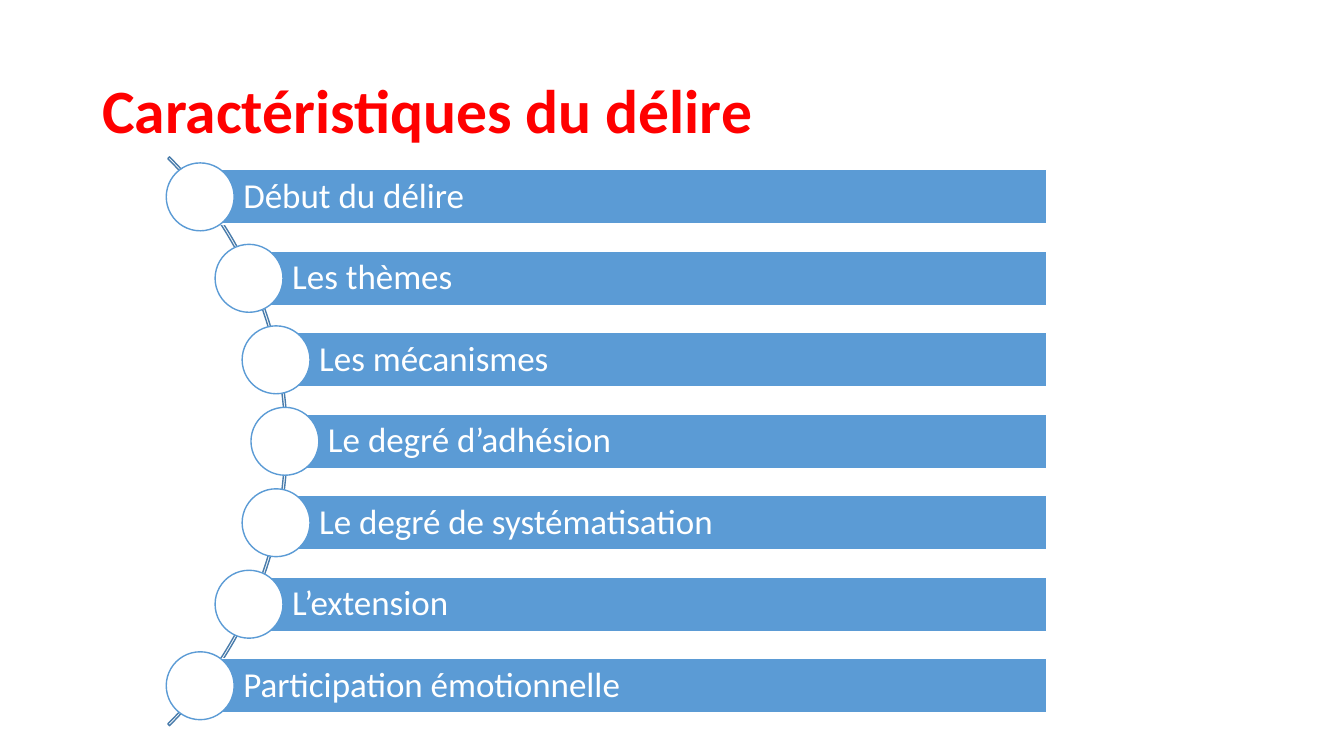
import pptx
import pptx.util
import pptx.dml.color
import pptx.enum.shapes
import pptx.enum.text

Pt = pptx.util.Pt
RGB = pptx.dml.color.RGBColor
KIND = pptx.enum.shapes.MSO_SHAPE
MIDDLE = pptx.enum.text.MSO_ANCHOR.MIDDLE
LEFT = pptx.enum.text.PP_ALIGN.LEFT

# Content: each trait with the left edge of its bar
TITLE = "Caractéristiques du délire"
TRAITS = [
    ("Début du délire", 143),
    ("Les thèmes", 177.9),
    ("Les mécanismes", 197.2),
    ("Le degré d’adhésion", 203.5),
    ("Le degré de systématisation", 197.2),
    ("L’extension", 177.9),
    ("Participation émotionnelle", 143),
]

# Colours and sizes
RED = RGB(0xFF, 0x00, 0x00)
BLUE = RGB(0x5B, 0x9B, 0xD5)
DARK = RGB(0x49, 0x7C, 0xAB)
WHITE = RGB(0xFF, 0xFF, 0xFF)
CENTER = 315.2
STEP = 58.2
RIGHT = 747.4
BAR = 38.8
DISC = 48.5
ARC = 574.6


def draw(kind, left, top, width, height, fill, line):
    shape = slide.shapes.add_shape(kind, Pt(left), Pt(top), Pt(width), Pt(height))
    shape.shadow.inherit = False
    if fill is None:
        shape.fill.background()
    else:
        shape.fill.solid()
        shape.fill.fore_color.rgb = fill
    shape.line.color.rgb = line
    shape.line.width = Pt(1)
    return shape


def write(shape, text, size, color, bold=False):
    frame = shape.text_frame
    frame.word_wrap = True
    frame.vertical_anchor = MIDDLE
    para = frame.paragraphs[0]
    para.text = text
    para.alignment = LEFT
    para.line_spacing = 0.9
    para.font.name = "Calibri"
    para.font.size = Pt(size)
    para.font.bold = bold
    para.font.color.rgb = color
    return frame


deck = pptx.Presentation()
deck.slide_width, deck.slide_height = Pt(960), Pt(540)
slide = deck.slides.add_slide(deck.slide_layouts[6])

# Title
box = slide.shapes.add_textbox(Pt(66), Pt(28.8), Pt(828), Pt(104.4))
write(box, TITLE, 44, RED, True)

# Arc behind the discs, from 315 to 45 degrees
arc = draw(KIND.BLOCK_ARC, -369.4, CENTER - ARC / 2, ARC, ARC, None, DARK)
for index, value in enumerate((189, 27, 0.003)):
    arc.adjustments[index] = value

# Bars, each with a disc centred on its left edge
for row, (text, left) in enumerate(TRAITS):
    mid = CENTER + (row - len(TRAITS) // 2) * STEP
    bar = draw(KIND.RECTANGLE, left, mid - BAR / 2, RIGHT - left, BAR, BLUE, WHITE)
    frame = write(bar, text, 25, WHITE)
    frame.margin_left = Pt(30.8)
    frame.margin_top = frame.margin_right = frame.margin_bottom = Pt(5)
    draw(KIND.OVAL, left - DISC / 2, mid - DISC / 2, DISC, DISC, WHITE, BLUE)

deck.save("out.pptx")
